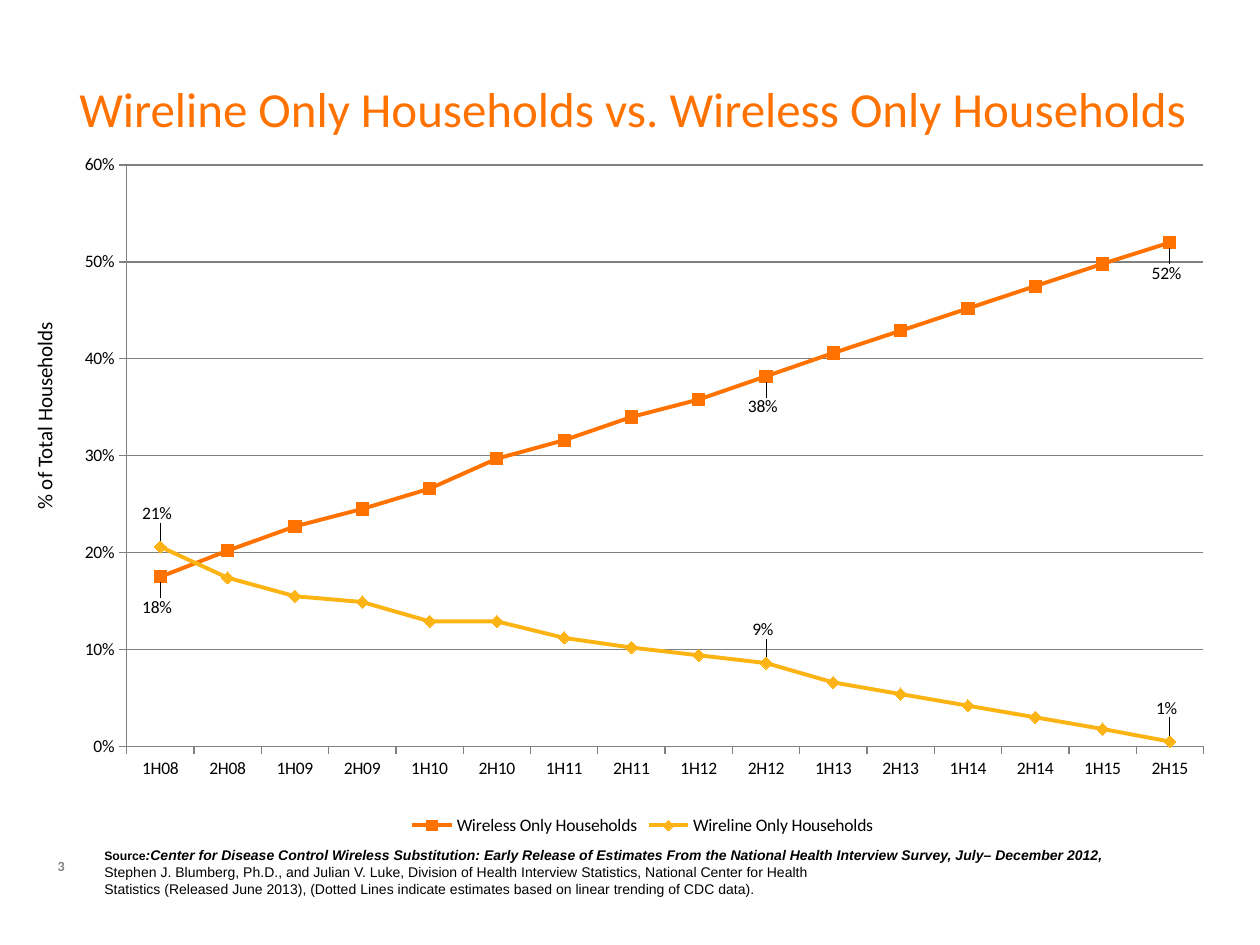
import pptx
import pptx.chart.data
import pptx.dml.color
import pptx.enum.chart
import pptx.enum.text
import pptx.oxml
import pptx.util
from pptx.util import Inches

ORANGE, GOLD, GRAY, BLACK = "FF7200", "FCB314", "808080", "000000"
SPACE = "http://schemas.openxmlformats.org/drawingml/2006/chart"
EXT = "http://schemas.microsoft.com/office/drawing/2012/chart"
CATS = [f"{half}H{year:02}" for year in range(8, 16) for half in (1, 2)]
WIRELESS = [0.175, 0.202, 0.227, 0.245, 0.266, 0.297, 0.316, 0.34,
            0.358, 0.382, 0.406, 0.429, 0.452, 0.475, 0.498, 0.52]
WIRELINE = [0.206, 0.174, 0.155, 0.149, 0.129, 0.129, 0.112, 0.102,
            0.094, 0.086, 0.066, 0.054, 0.042, 0.03, 0.018, 0.005]
MARK = pptx.enum.chart.XL_MARKER_STYLE
PLACE = pptx.enum.chart.XL_LABEL_POSITION
LINES = [
    ("Wireless Only Households", WIRELESS, ORANGE, MARK.SQUARE, PLACE.BELOW, 0.014),
    ("Wireline Only Households", WIRELINE, GOLD, MARK.DIAMOND, PLACE.ABOVE, -0.018),
]
LABELED = (0, 9, 15)
SOURCE = [
    [("Source", 7, True, False),
     (":Center for Disease Control Wireless Substitution: Early Release of Estimates "
      "From the National Health Interview Survey, July– December 2012,", 8, True, True)],
    [("Stephen J. Blumberg, Ph.D., and Julian V. Luke, Division of Health Interview "
      "Statistics, National Center for Health", 8, False, False)],
    [("Statistics (Released June 2013), (Dotted Lines indicate estimates based on "
      "linear trending of CDC data).", 8, False, False)],
]


def color(code):
    return pptx.dml.color.RGBColor.from_string(code)


def layout(kind="", **parts):
    target = '<c:layoutTarget val="inner"/>' if kind == "inner" else ""
    modes = '<c:xMode val="edge"/><c:yMode val="edge"/>' if kind else ""
    sizes = "".join(f'<c:{key} val="{val}"/>' for key, val in parts.items())
    return pptx.oxml.parse_xml(
        f'<c:layout xmlns:c="{SPACE}"><c:manualLayout>{target}{modes}{sizes}'
        "</c:manualLayout></c:layout>")


def leaders():
    return pptx.oxml.parse_xml(
        f'<c:extLst xmlns:c="{SPACE}"><c:ext uri="{{CE6537A1-D6FC-4f65-9D91-7224C49458BB}}" '
        f'xmlns:c15="{EXT}"><c15:showLeaderLines val="1"/></c:ext></c:extLst>')


class Deck:
    """Holds the style and the current slide."""

    def __init__(self):
        self.file = pptx.Presentation()
        self.file.slide_width, self.file.slide_height = Inches(10), Inches(7.5)
        self.slide = self.file.slides.add_slide(self.file.slide_layouts[5])
        self.font = "Calibri"

    def style(self, font, size, code, bold=False, slant=False, name=None):
        font.name, font.size = name or self.font, pptx.util.Pt(size)
        font.bold, font.italic = bold, slant
        font.color.rgb = color(code)

    def title(self, text, box):
        shape = self.slide.shapes.title
        shape.left, shape.top, shape.width, shape.height = map(Inches, box)
        frame = shape.text_frame
        frame.margin_left = frame.margin_right = frame.margin_top = frame.margin_bottom = 0
        frame.vertical_anchor = pptx.enum.text.MSO_ANCHOR.MIDDLE
        frame.text = text
        frame.paragraphs[0].alignment = pptx.enum.text.PP_ALIGN.LEFT
        self.style(frame.paragraphs[0].runs[0].font, 28, ORANGE)

    def text(self, rows, box, code=BLACK, name=None, turn=0, align=None):
        shape = self.slide.shapes.add_textbox(*map(Inches, box))
        shape.rotation = turn
        frame = shape.text_frame
        frame.word_wrap = True
        frame.vertical_anchor = pptx.enum.text.MSO_ANCHOR.MIDDLE
        for num, row in enumerate(rows):
            para = frame.add_paragraph() if num else frame.paragraphs[0]
            para.alignment = align
            for words, size, bold, slant in row:
                run = para.add_run()
                run.text = words
                self.style(run.font, size, code, bold, slant, name)

    def axis(self, axis):
        axis.major_tick_mark = pptx.enum.chart.XL_TICK_MARK.OUTSIDE
        axis.format.line.color.rgb = color(GRAY)

    def line(self, series, code, mark, place, shift):
        series.smooth = False
        series.format.line.width = pptx.util.Pt(2.25)
        series.format.line.color.rgb = color(code)
        series.marker.style, series.marker.size = mark, 7
        series.marker.format.fill.solid()
        series.marker.format.fill.fore_color.rgb = color(code)
        series.marker.format.line.color.rgb = color(code)
        labels = series.data_labels
        labels.show_value = False
        labels.number_format, labels.number_format_is_linked = "0%", False
        for num in LABELED:
            series.points[num].data_label.position = place
        node = series.data_labels._element
        for label in node.findall(f"{{{SPACE}}}dLbl"):
            label.insert(1, layout(x=-0.003, y=shift))
        if shift < 0:
            node.append(leaders())

    def chart(self, box):
        data = pptx.chart.data.CategoryChartData(number_format="0%")
        data.categories = CATS
        for name, vals, *_ in LINES:
            data.add_series(name, vals)
        kind = pptx.enum.chart.XL_CHART_TYPE.LINE_MARKERS
        chart = self.slide.shapes.add_chart(kind, *map(Inches, box), data).chart
        self.style(chart.font, 10, BLACK)
        chart.has_title = False
        chart.has_legend = True
        chart.legend.position = pptx.enum.chart.XL_LEGEND_POSITION.BOTTOM
        chart.legend.include_in_layout = True
        chart.plots[0].vary_by_categories = False
        self.axis(chart.category_axis)
        value = chart.value_axis
        self.axis(value)
        value.minimum_scale, value.maximum_scale, value.major_unit = 0, 0.6, 0.1
        value.tick_labels.number_format = "0%"
        value.tick_labels.number_format_is_linked = False
        value.has_major_gridlines = True
        value.major_gridlines.format.line.color.rgb = color(GRAY)
        for series, (_, _, *look) in zip(chart.plots[0].series, LINES):
            self.line(series, *look)
        area = chart._chartSpace.chart.plotArea
        for old in area.findall(f"{{{SPACE}}}layout"):
            area.remove(old)
        area.insert(0, layout("inner", x=0.042, y=0.029, w=0.956, h=0.836))


def main():
    deck = Deck()
    deck.title("Wireline Only Households vs. Wireless Only Households", (0.63, 0.56, 9.18, 0.59))
    deck.text([[("3", 8, True, False)]], (0.36, 6.67, 0.37, 0.4), GRAY)
    deck.chart((0.63, 1.15, 8.94, 5.52))
    deck.text(SOURCE, (0.73, 6.67, 8.75, 0.5), name="Arial")
    deck.text([[("% of Total Households", 12, False, False)]], (-1.42, 3.15, 3.54, 0.3),
              turn=270, align=pptx.enum.text.PP_ALIGN.CENTER)
    deck.file.save("out.pptx")


if __name__ == "__main__":
    main()
